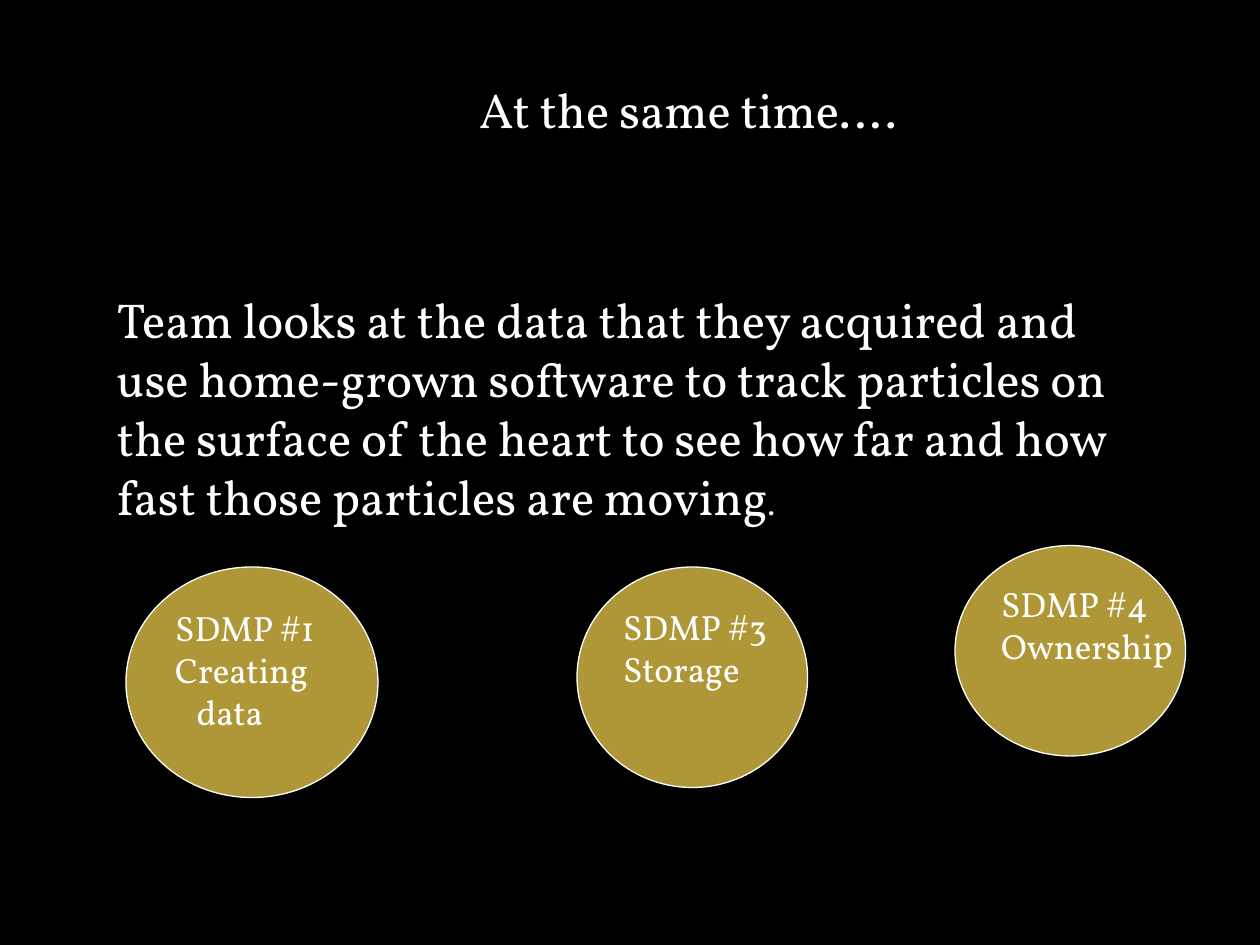
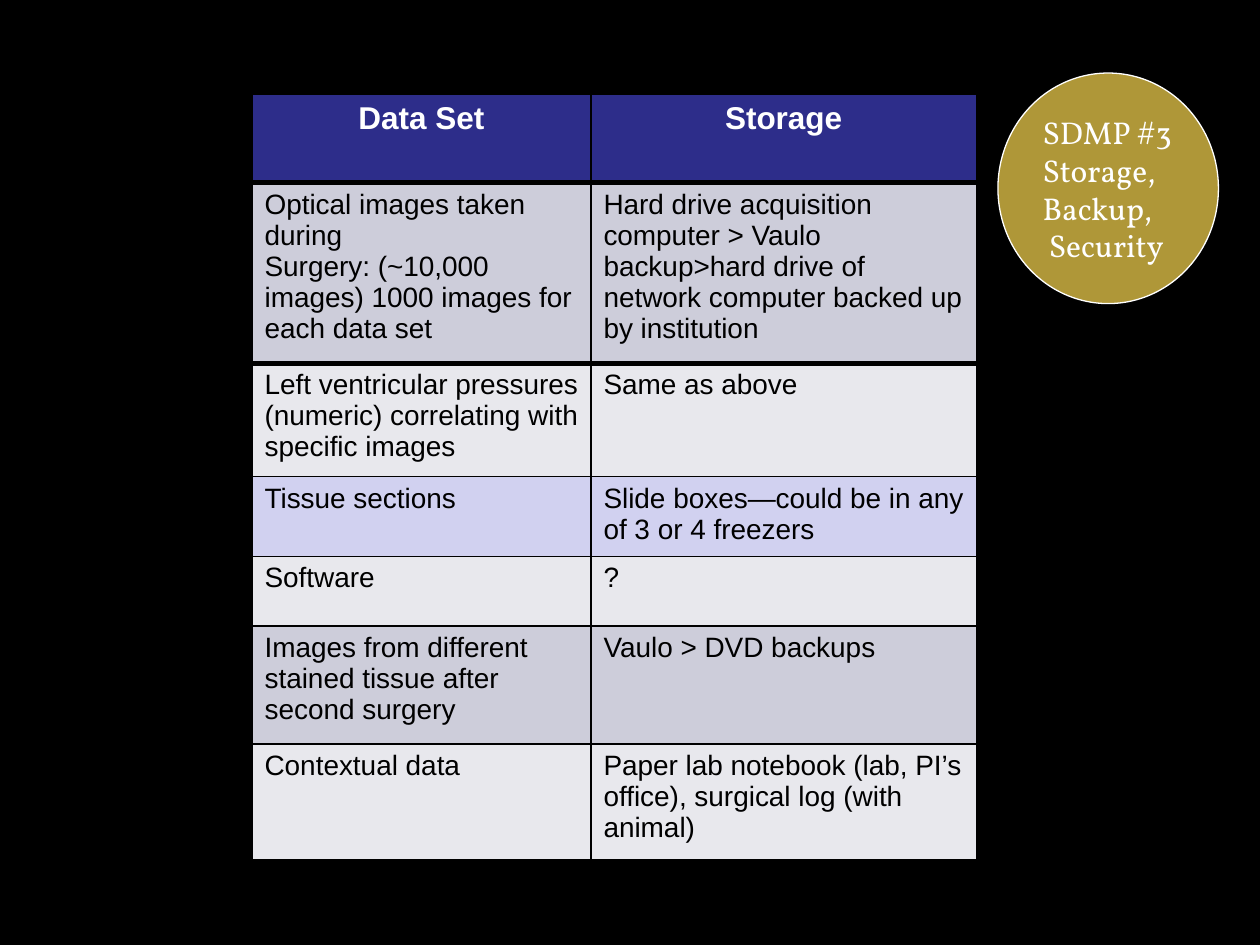
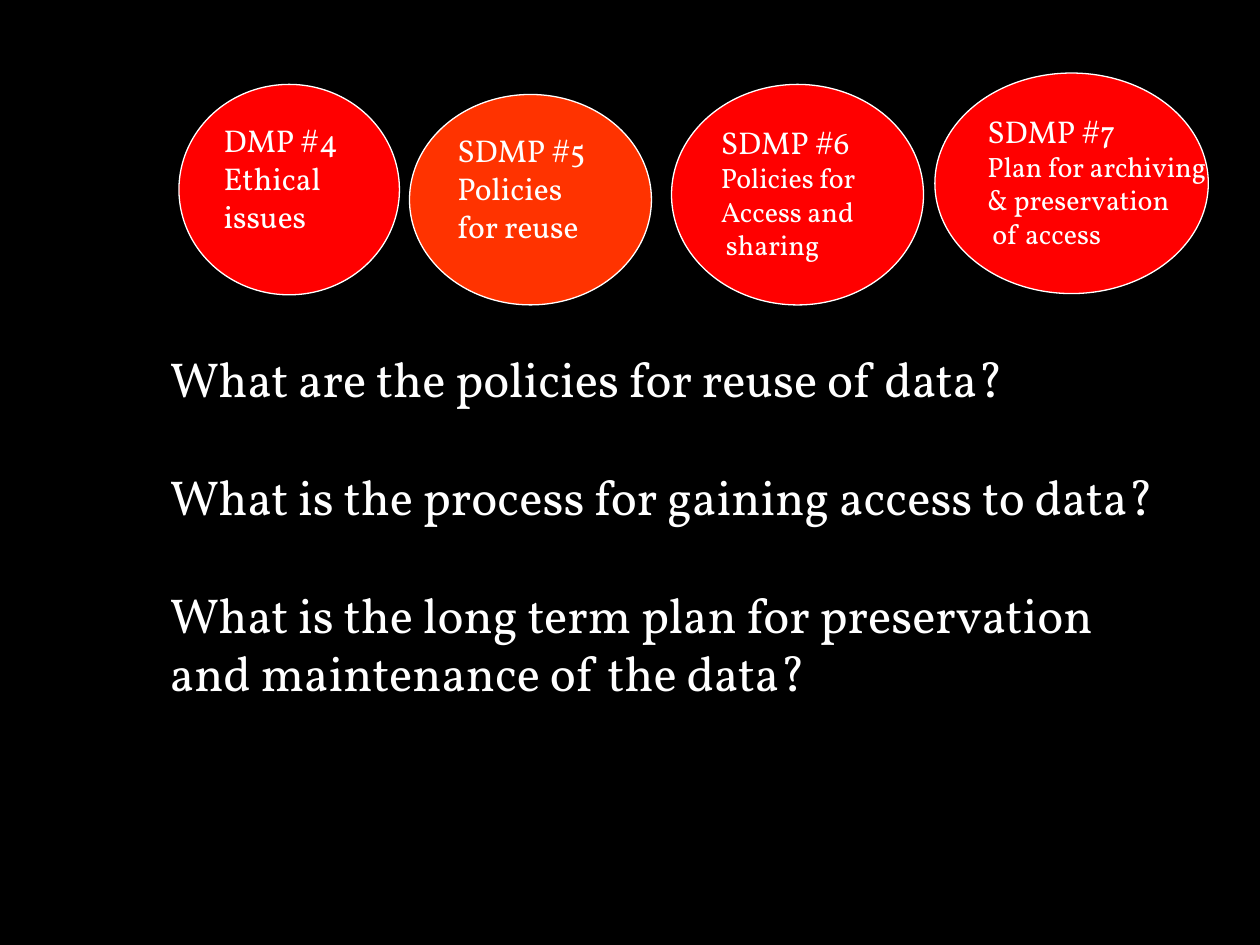
from dataclasses import dataclass
from typing import NamedTuple

from lxml import etree
from pptx import Presentation
from pptx.dml import color as dml
from pptx.enum import shapes, text
from pptx.oxml import ns
from pptx.util import Inches, Pt

BLACK, WHITE = "000000", "FFFFFF"
GOLD, RED, ORANGE = "AF9738", "FF0000", "FF3300"
NAVY, GREY, PALE, LILAC = "2D2D8A", "CDCDDA", "E8E8ED", "D1D1F0"
SERIF, SANS = "Vollkorn", "Arial"
LEFT, CENTER = text.PP_ALIGN.LEFT, text.PP_ALIGN.CENTER
HEADING_SIZE = 28
LINE_HEIGHT = 33.6


class Line(NamedTuple):
    """One line of a badge, with its size and left indent."""
    text: str
    size: float
    indent: float = 0


@dataclass
class Badge:
    """An ellipse that names a section of the data plan."""
    left: float
    top: float
    width: float
    height: float
    lines: list[Line]
    color: str = GOLD


class Row(NamedTuple):
    """One row of the storage table."""
    height: float
    fill: str
    data_set: str
    storage: str


TIME_BADGES = [
    Badge(1, 4.5, 2, 1.83,
          [Line("SDMP #1", 20), Line("Creating", 20), Line("data", 20, 0.17)]),
    Badge(7.58, 4.33, 1.83, 1.67, [Line("SDMP #4", 20), Line("Ownership", 20)]),
    Badge(4.58, 4.5, 1.83, 1.75, [Line("SDMP #3", 20), Line("Storage", 20)]),
]

STORAGE_BADGES = [
    Badge(7.92, 0.58, 1.75, 1.83,
          [Line("SDMP #3", 18), Line("Storage,", 18), Line("Backup,", 18),
           Line("Security", 18, 0.05)]),
]

POLICY_BADGES = [
    Badge(3.25, 0.75, 1.92, 1.67,
          [Line("SDMP #5", 18), Line("Policies", 18), Line("for reuse", 18)], ORANGE),
    Badge(5.33, 0.67, 2, 1.75,
          [Line("SDMP #6", 18), Line("Policies for", 16), Line("Access and", 16),
           Line("sharing", 16, 0.04)], RED),
    Badge(7.42, 0.58, 2.17, 1.75,
          [Line("SDMP #7", 18), Line("Plan for archiving", 16),
           Line("& preservation", 16), Line("of access", 16, 0.04)], RED),
    Badge(1.42, 0.67, 1.75, 1.67,
          [Line("DMP #4", 18), Line("Ethical", 18), Line("issues", 18)], RED),
]

STORAGE_COLUMNS = (2.69, 3.06)
STORAGE_ROWS = [
    Row(0.7, NAVY, "Data Set", "Storage"),
    Row(1.43, GREY,
        "Optical images taken during\n"
        "Surgery: (~10,000 images) 1000 images for each data set",
        "Hard drive acquisition computer > Vaulo backup>hard drive of "
        "network computer backed up by institution"),
    Row(0.9, PALE,
        "Left ventricular pressures (numeric) correlating with specific images",
        "Same as above"),
    Row(0.63, LILAC, "Tissue sections",
        "Slide boxes—could be in any of 3 or 4 freezers"),
    Row(0.55, PALE, "Software", "?"),
    Row(0.94, GREY, "Images from different stained tissue after second surgery",
        "Vaulo > DVD backups"),
    Row(0.92, PALE, "Contextual data",
        "Paper lab notebook (lab, PI’s office), surgical log (with animal)"),
]
THICK_RULES = (1, 2)

QUESTIONS = [
    "What are the policies for reuse of data?",
    "What is the process for gaining access to data?",
    "What is the long term plan for preservation and maintenance of the data?",
]


def rgb(value: str) -> dml.RGBColor:
    """Turn a hex string into a colour."""
    return dml.RGBColor.from_string(value)


def add_run(paragraph, content: str, *, size: float = HEADING_SIZE, font: str = SERIF,
            color: str = WHITE, bold: bool = False, align=LEFT,
            indent: float = 0, before: float = 0) -> None:
    """Add formatted text to a paragraph."""
    paragraph.alignment = align
    paragraph.space_before = Pt(before)
    if indent:
        paragraph._p.get_or_add_pPr().set("marL", str(Inches(indent)))
    run = paragraph.add_run()
    run.text = content
    run.font.size = Pt(size)
    run.font.name = font
    run.font.bold = bold
    run.font.color.rgb = rgb(color)


def get_paragraph(frame, index: int):
    """Return the first paragraph of a frame or a new one after it."""
    return frame.add_paragraph() if index else frame.paragraphs[0]


def add_text_box(slide, left: float, top: float, width: float, height: float):
    """Add a wrapping text box and return its frame."""
    box = slide.shapes.add_textbox(Inches(left), Inches(top), Inches(width), Inches(height))
    box.text_frame.word_wrap = True
    return box.text_frame


def add_badges(slide, badges: list[Badge]) -> None:
    """Draw outlined ellipses with their lines of text."""
    for badge in badges:
        shape = slide.shapes.add_shape(
            shapes.MSO_SHAPE.OVAL, Inches(badge.left), Inches(badge.top),
            Inches(badge.width), Inches(badge.height))
        shape.shadow.inherit = False
        shape.fill.solid()
        shape.fill.fore_color.rgb = rgb(badge.color)
        shape.line.color.rgb = rgb(WHITE)
        shape.line.width = Pt(0.75)
        frame = shape.text_frame
        frame.word_wrap = False
        frame.vertical_anchor = text.MSO_ANCHOR.TOP
        for index, line in enumerate(badge.lines):
            add_run(get_paragraph(frame, index), line.text, size=line.size, indent=line.indent)


def add_borders(cell, top: float, bottom: float) -> None:
    """Give a cell black borders with the given top and bottom widths."""
    properties = cell._tc.get_or_add_tcPr()
    for side, width in {"L": 1, "R": 1, "T": top, "B": bottom}.items():
        border = etree.SubElement(properties, ns.qn(f"a:ln{side}"), w=str(Pt(width)))
        fill = etree.SubElement(border, ns.qn("a:solidFill"))
        etree.SubElement(fill, ns.qn("a:srgbClr"), val=BLACK)


def add_storage_table(slide) -> None:
    """Draw the table of data sets and where they are stored."""
    table = slide.shapes.add_table(
        len(STORAGE_ROWS), len(STORAGE_COLUMNS), Inches(2), Inches(0.75),
        Inches(sum(STORAGE_COLUMNS)), Inches(sum(row.height for row in STORAGE_ROWS))).table
    table.first_row = table.horz_banding = False
    for column, width in zip(table.columns, STORAGE_COLUMNS):
        column.width = Inches(width)
    for row_index, row in enumerate(STORAGE_ROWS):
        table.rows[row_index].height = Inches(row.height)
        top, bottom = (3 if rule in THICK_RULES else 1 for rule in (row_index, row_index + 1))
        style = (dict(size=16, color=BLACK) if row_index
                 else dict(size=18, bold=True, align=CENTER))
        for column_index, content in enumerate((row.data_set, row.storage)):
            cell = table.cell(row_index, column_index)
            add_borders(cell, top, bottom)
            cell.fill.solid()
            cell.fill.fore_color.rgb = rgb(row.fill)
            for index, part in enumerate(content.split("\n")):
                add_run(get_paragraph(cell.text_frame, index), part, font=SANS, **style)


def build_time_slide(slide) -> None:
    """Build the slide on tracking particles."""
    title = add_text_box(slide, 1.67, 0.58, 7.58, 0.57)
    add_run(title.paragraphs[0], "At the same time….", align=CENTER)
    body = add_text_box(slide, 0.83, 2.25, 8.33, 1.99).paragraphs[0]
    add_run(body, "Team looks at the data that they acquired and use home-grown software "
                  "to track particles on the surface of the heart to see how far and how "
                  "fast those particles are moving")
    add_run(body, ".", size=18)
    add_badges(slide, TIME_BADGES)


def build_storage_slide(slide) -> None:
    """Build the slide on storage."""
    add_storage_table(slide)
    add_badges(slide, STORAGE_BADGES)


def build_policy_slide(slide) -> None:
    """Build the slide on policies for reuse, access and preservation."""
    frame = add_text_box(slide, 1.25, 2.72, 8.08, 3.4)
    for index, question in enumerate(QUESTIONS):
        add_run(get_paragraph(frame, index), question, before=LINE_HEIGHT if index else 0)
    add_badges(slide, POLICY_BADGES)


def main() -> None:
    """Build and save the presentation."""
    presentation = Presentation()
    presentation.slide_width, presentation.slide_height = Inches(10), Inches(7.5)
    background = presentation.slide_master.background.fill
    background.solid()
    background.fore_color.rgb = rgb(BLACK)
    for build in (build_time_slide, build_storage_slide, build_policy_slide):
        build(presentation.slides.add_slide(presentation.slide_layouts[6]))
    presentation.save("out.pptx")


if __name__ == "__main__":
    main()
